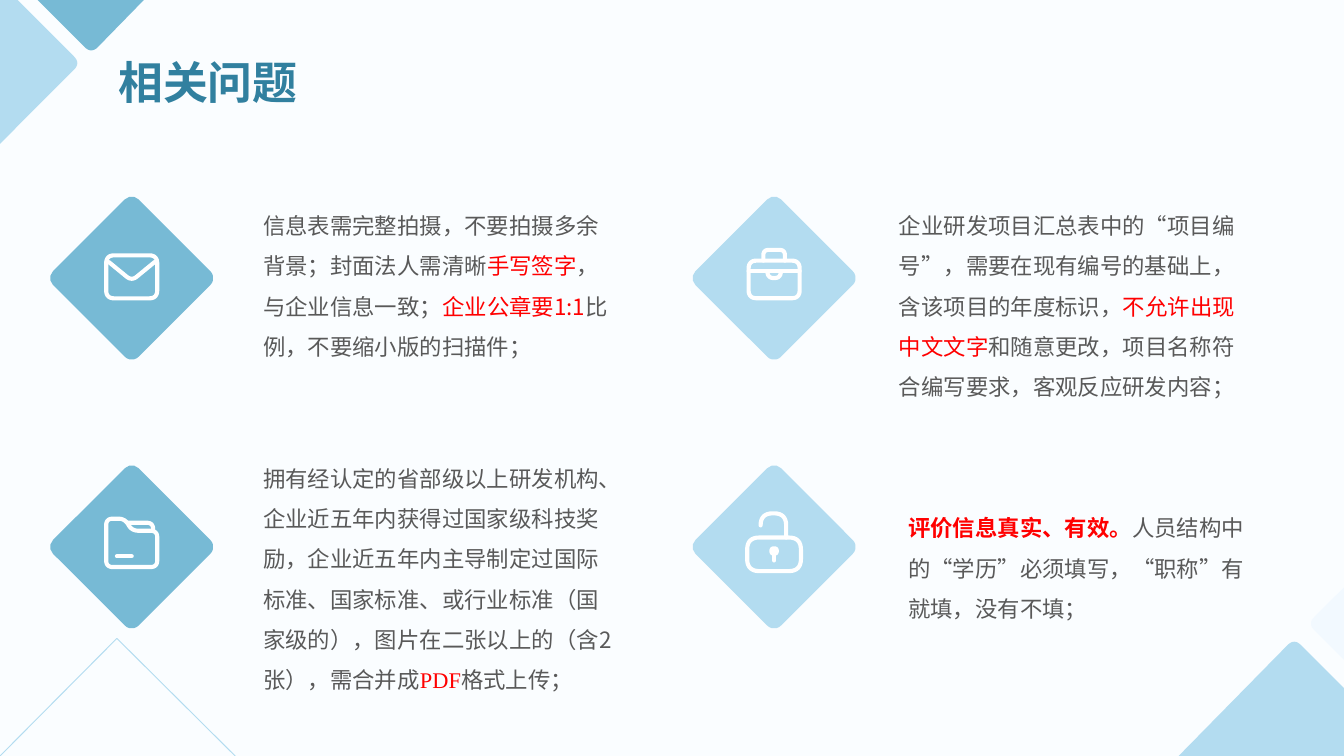
"""Build the slide on common questions: four diamonds with icons and advice."""
from math import hypot

from pptx import Presentation
from pptx.dml.color import RGBColor
from pptx.enum.shapes import MSO_SHAPE
from pptx.enum.text import MSO_ANCHOR, MSO_AUTO_SIZE, PP_ALIGN
from pptx.oxml.ns import qn
from pptx.util import Inches, Pt

WIDTH = 10
HEIGHT = WIDTH * 9 / 16
FONT = "Noto Sans CJK SC"
LATIN_FONT = "Times New Roman"
BACKDROP = RGBColor(0xFA, 0xFD, 0xFF)
LIGHT = RGBColor(0xB3, 0xDC, 0xF0)
DARK = RGBColor(0x77, 0xBA, 0xD5)
PALE = RGBColor(0xF2, 0xF9, 0xFF)
WHITE = RGBColor(0xFF, 0xFF, 0xFF)
GREY = RGBColor(0x59, 0x59, 0x59)
RED = RGBColor(0xFF, 0x00, 0x00)
TEAL = RGBColor(0x31, 0x80, 0x9F)

TILE = 0.9
COLUMNS = [0.53, 5.31]
ROWS = [1.62, 3.62]

deck = Presentation()
deck.slide_width, deck.slide_height = Inches(WIDTH), Inches(HEIGHT)
page = deck.slides.add_slide(deck.slide_layouts[5])
page.background.fill.solid()
page.background.fill.fore_color.rgb = BACKDROP


def rounded(points, radius, closed=False):
    """Return the points with each inner corner replaced by a curve."""
    count = len(points)
    outline = []
    for index, (x, y) in enumerate(points):
        if not closed and index in (0, count - 1):
            outline.append((x, y))
            continue
        ends = []
        for nx, ny in (points[index - 1], points[(index + 1) % count]):
            share = radius / hypot(nx - x, ny - y)
            ends.append((x + (nx - x) * share, y + (ny - y) * share))
        (ax, ay), (bx, by) = ends
        for step in range(9):
            t = step / 8
            outline.append(((1 - t) ** 2 * ax + 2 * t * (1 - t) * x + t * t * bx,
                            (1 - t) ** 2 * ay + 2 * t * (1 - t) * y + t * t * by))
    return outline + outline[:1] if closed else outline


def draw(contours, color, weight=None, center=(0, 0)):
    """Draw contours as one shape, filled or stroked when a weight is given."""
    builder = None
    for contour in contours:
        points = [(Inches(center[0] + x), Inches(center[1] + y)) for x, y in contour]
        if builder is None:
            builder = page.shapes.build_freeform(*points[0], scale=1.0)
        else:
            builder.move_to(*points[0])
        builder.add_line_segments(points[1:], close=weight is None)
    shape = builder.convert_to_shape()
    shape.shadow.inherit = False
    if weight is None:
        shape.fill.solid()
        shape.fill.fore_color.rgb = color
        shape.line.fill.background()
    else:
        shape.fill.background()
        shape.line.color.rgb = color
        shape.line.width = Pt(weight)
        shape._element.spPr.find(qn("a:ln")).set("cap", "rnd")


corners = [
    ([(0.13, 0), (0.6, 0.47), (0, 1.07)], [(0, 0)], LIGHT),
    ([(0.28, 0), (0.68, 0.4), (1.07, 0)], [], DARK),
    ([(WIDTH, 4.37), (9.73, 4.64), (WIDTH, 4.91)], [], PALE),
    ([(8.77, HEIGHT), (9.63, 4.75), (WIDTH, 5.12)], [(WIDTH, HEIGHT)], LIGHT),
]
for points, sharp, color in corners:
    draw([rounded(points, 0.07) + sharp], color)
draw([[(0, HEIGHT), (0.87, 4.75), (1.75, HEIGHT)]], LIGHT, 0.5)

envelope = [
    rounded([(-0.19, -0.17), (0.19, -0.17), (0.19, 0.15), (-0.19, 0.15)], 0.06, True),
    rounded([(-0.17, -0.12), (0, 0.02), (0.17, -0.12)], 0.05),
]
briefcase = [
    rounded([(-0.19, -0.13), (0.19, -0.13), (0.19, 0.15), (-0.19, 0.15)], 0.06, True),
    rounded([(-0.08, -0.13), (-0.08, -0.21), (0.08, -0.21), (0.08, -0.13)], 0.04),
    [(-0.19, -0.05), (0.19, -0.05)],
    rounded([(-0.05, -0.05), (-0.05, 0), (0.05, 0), (0.05, -0.05)], 0.05),
]
folder = [
    rounded([(-0.19, -0.21), (-0.05, -0.21), (0, -0.12), (0.19, -0.12),
             (0.19, 0.15), (-0.19, 0.15)], 0.05, True),
    rounded([(-0.03, -0.18), (0.16, -0.18), (0.16, -0.12)], 0.05),
    [(-0.11, 0.07), (0, 0.07)],
]
padlock = [
    rounded([(-0.2, -0.07), (0.2, -0.07), (0.2, 0.18), (-0.2, 0.18)], 0.09, True),
    rounded([(-0.1, -0.16), (-0.1, -0.25), (0.09, -0.25), (0.09, -0.07)], 0.09),
]
keyhole = [
    rounded([(-0.02, 0.01), (0.02, 0.01), (0.02, 0.05), (-0.02, 0.05)], 0.02, True),
    [(0, 0.03), (0, 0.1)],
]

topics = [
    (0, 0, DARK, [envelope], (1.86, 1.43, 1.31), [
        ("信息表需完整拍摄，不要拍摄多余背景；封面法人需清晰", GREY),
        ("手写签字", RED),
        ("，与企业信息一致；", GREY),
        ("企业公章要1:1", RED),
        ("比例，不要缩小版的扫描件；", GREY)]),
    (0, 1, DARK, [folder], (1.86, 3.31, 1.92), [
        ("拥有经认定的省部级以上研发机构、企业近五年内获得过国家级科技奖励，"
         "企业近五年内主导制定过国际标准、国家标准、或行业标准（国家级的），"
         "图片在二张以上的（含2张），需合并成", GREY),
        ("PDF", RED),
        ("格式上传；", GREY)]),
    (1, 0, LIGHT, [briefcase], (6.59, 1.43, 1.61), [
        ("企业研发项目汇总表中的“项目编号”，需要在现有编号的基础上，含该项目的年度标识，", GREY),
        ("不允许出现中文文字", RED),
        ("和随意更改，项目名称符合编写要求，客观反应研发内容；", GREY)]),
    (1, 1, LIGHT, [padlock, keyhole], (6.66, 3.68, 1.01), [
        ("评价信息真实、有效。", RED),
        ("人员结构中的“学历”必须填写，“职称”有就填，没有不填；", GREY)]),
]
for column, row, color, icons, (left, top, height), spans in topics:
    x, y = COLUMNS[column], ROWS[row]
    diamond = page.shapes.add_shape(MSO_SHAPE.ROUNDED_RECTANGLE, Inches(x), Inches(y),
                                    Inches(TILE), Inches(TILE))
    diamond.adjustments[0] = 0.08
    diamond.rotation = 45
    diamond.shadow.inherit = False
    diamond.fill.solid()
    diamond.fill.fore_color.rgb = color
    diamond.line.fill.background()
    for icon in icons:
        draw(icon, WHITE, 2.2, (x + TILE / 2, y + TILE / 2))

    box = page.shapes.add_textbox(Inches(left), Inches(top), Inches(2.86), Inches(height))
    box.text_frame.word_wrap = True
    para = box.text_frame.paragraphs[0]
    para.line_spacing = 1.5
    for text, ink in spans:
        span = para.add_run()
        span.text = text
        span.font.size = Pt(12)
        span.font.name = LATIN_FONT if text == "PDF" else FONT
        span.font.color.rgb = ink
        span.font.bold = text.startswith("评价信息")

title = page.shapes.title
title.left, title.top, title.width, title.height = map(Inches, (0.78, 0.36, 1.54, 0.5))
title.text_frame.text = "相关问题"
title.text_frame.word_wrap = False
title.text_frame.auto_size = MSO_AUTO_SIZE.NONE
title.text_frame.vertical_anchor = MSO_ANCHOR.TOP
heading = title.text_frame.paragraphs[0]
heading.alignment = PP_ALIGN.LEFT
heading.runs[0].font.size = Pt(24)
heading.runs[0].font.bold = True
heading.runs[0].font.name = FONT
heading.runs[0].font.color.rgb = TEAL

for shape in page.shapes:
    for para in shape.text_frame.paragraphs:
        for span in para.runs:
            east_asian = span._r.get_or_add_rPr().makeelement(qn("a:ea"), {"typeface": FONT})
            span._r.get_or_add_rPr().append(east_asian)

deck.save("out.pptx")
